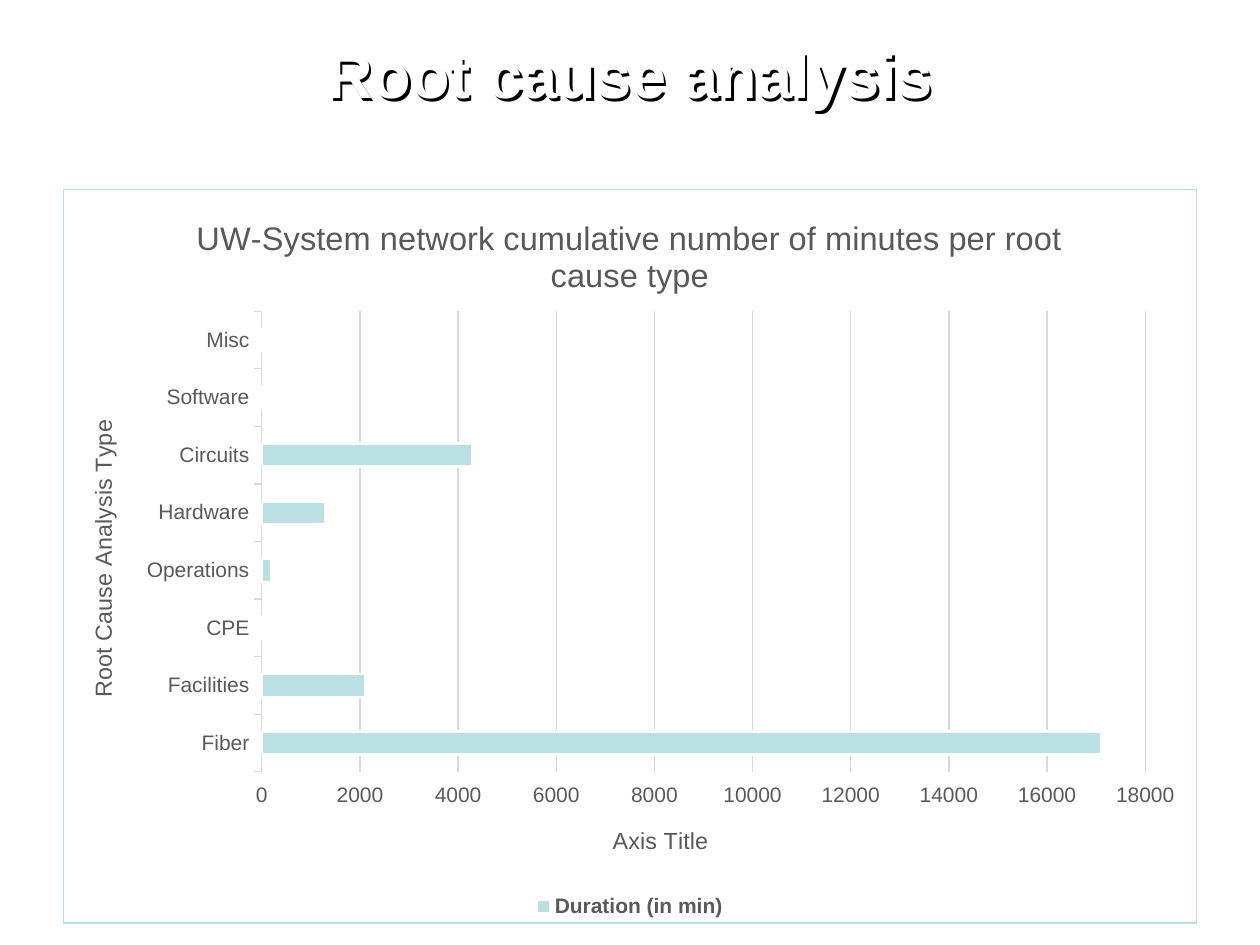
from lxml.etree import SubElement
from pptx import Presentation
from pptx.chart.data import CategoryChartData
from pptx.dml.color import RGBColor
from pptx.enum.chart import XL_CHART_TYPE, XL_LEGEND_POSITION, XL_TICK_MARK
from pptx.enum.text import MSO_ANCHOR, PP_ALIGN
from pptx.oxml import parse_xml
from pptx.oxml.ns import nsdecls, qn
from pptx.util import Inches, Pt

HEADING = "Root cause analysis"
CHART_TITLE = "UW-System network cumulative number of minutes per root cause type"
CATEGORY_TITLE, VALUE_TITLE = "Root Cause Analysis Type", "Axis Title"
SERIES = "Duration (in min)"
MINUTES = {
    "Fiber": 17100, "Facilities": 2100, "CPE": 0, "Operations": 200,
    "Hardware": 1300, "Circuits": 4300, "Software": 0, "Misc": 0,
}
FONT, GREY, PALE, TEAL, WHITE = "Arial", "595959", "D9D9D9", "BBE0E3", "FFFFFF"
PLOT_SHARES = {"x": 0.175, "y": 0.166, "w": 0.78, "h": 0.628}


def color(value):
    return RGBColor.from_string(value)


def style(font, size, fill=GREY, bold=False):
    font.name, font.size, font.bold = FONT, Pt(size), bold
    font.color.rgb = color(fill)


def write(frame, text, size, fill=GREY, bold=False):
    para = frame.paragraphs[0]
    para.alignment = PP_ALIGN.CENTER
    span = para.add_run()
    span.text = text
    style(span.font, size, fill, bold)


def draw_line(line, fill, width=0.75):
    line.color.rgb = color(fill)
    line.width = Pt(width)


deck = Presentation()
deck.slide_width, deck.slide_height = Inches(10), Inches(7.5)
page = deck.slides.add_slide(deck.slide_layouts[6])

# Heading: white letters with a black shadow
box = page.shapes.add_textbox(0, 0, deck.slide_width, Inches(1.17))
box.text_frame.word_wrap = True
box.text_frame.vertical_anchor = MSO_ANCHOR.MIDDLE
write(box.text_frame, HEADING, 36, WHITE, bold=True)
box.element.spPr.append(parse_xml(
    f'<a:effectLst {nsdecls("a")}><a:outerShdw blurRad="0" dist="{Pt(2)}" '
    'dir="2700000" algn="tl" rotWithShape="0"><a:srgbClr val="000000"/>'
    '</a:outerShdw></a:effectLst>'))

# Bar chart
data = CategoryChartData()
data.categories = list(MINUTES)
data.add_series(SERIES, list(MINUTES.values()))
chart = page.shapes.add_chart(XL_CHART_TYPE.BAR_CLUSTERED, Inches(0.5), Inches(1.5),
                              Inches(9), Inches(5.83), data).chart
style(chart.font, 10, "000000")
chart.has_title = True
write(chart.chart_title.text_frame, CHART_TITLE, 18.6)
chart.chart_title.include_in_layout = False

plot = chart.plots[0]
plot.gap_width = 150
plot.vary_by_categories = False
bars = plot.series[0].format
bars.fill.solid()
bars.fill.fore_color.rgb = color(TEAL)
draw_line(bars.line, WHITE, 1.5)

# Axes
for axis, title in ((chart.category_axis, CATEGORY_TITLE), (chart.value_axis, VALUE_TITLE)):
    axis.has_title = True
    write(axis.axis_title.text_frame, title, 13.3)
    style(axis.tick_labels.font, 12)
    axis.major_tick_mark = XL_TICK_MARK.OUTSIDE
    axis.minor_tick_mark = XL_TICK_MARK.NONE
chart.category_axis.axis_title.text_frame._txBody.bodyPr.set("rot", "-5400000")
draw_line(chart.category_axis.format.line, PALE)
values = chart.value_axis
values.minimum_scale, values.maximum_scale, values.major_unit = 0, 18000, 2000
values.format.line.fill.background()
values.has_major_gridlines = True
draw_line(values.major_gridlines.format.line, PALE)

# Legend
chart.has_legend = True
chart.legend.position = XL_LEGEND_POSITION.BOTTOM
chart.legend.include_in_layout = False
style(chart.legend.font, 12, bold=True)

# Plot position and chart border
area = chart._chartSpace.chart.plotArea
for old in area.findall(qn("c:layout")):
    area.remove(old)
layout = parse_xml(f'<c:layout {nsdecls("c")}><c:manualLayout/></c:layout>')
settings = {"layoutTarget": "inner", "xMode": "edge", "yMode": "edge", **PLOT_SHARES}
for name, value in settings.items():
    SubElement(layout[0], qn(f"c:{name}")).set("val", str(value))
area.insert(0, layout)
chart._chartSpace.chart.addnext(parse_xml(
    f'<c:spPr {nsdecls("c", "a")}><a:noFill/><a:ln w="{Pt(0.75)}"><a:solidFill>'
    f'<a:srgbClr val="{TEAL}"/></a:solidFill></a:ln></c:spPr>'))

deck.save("out.pptx")
